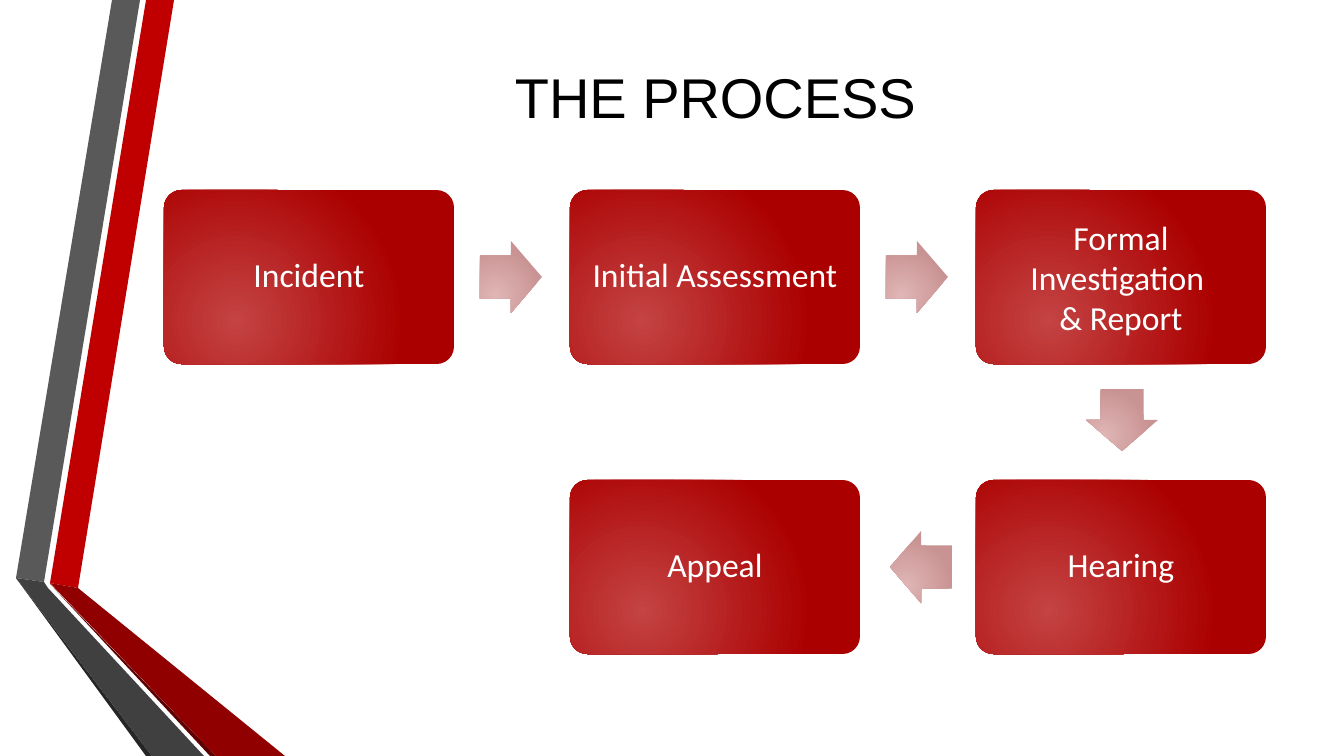
from pptx import Presentation
from pptx.dml.color import RGBColor
from pptx.enum.shapes import MSO_SHAPE as Shape
from pptx.enum.text import MSO_ANCHOR as Anchor, PP_ALIGN as Align
from pptx.oxml import parse_xml
from pptx.oxml.ns import nsdecls, qn
from pptx.util import Pt

EMU_PER_PX = 914400 / 100.8
BLACK = RGBColor(0x00, 0x00, 0x00)
WHITE = RGBColor(0xFF, 0xFF, 0xFF)
RED = RGBColor(0xC0, 0x00, 0x00)
DARK_RED = RGBColor(0x90, 0x00, 0x00)
DEEP_RED = RGBColor(0x60, 0x00, 0x00)
GREY = RGBColor(0x59, 0x59, 0x59)
DARK_GREY = RGBColor(0x40, 0x40, 0x40)
DEEP_GREY = RGBColor(0x26, 0x26, 0x26)
BOX_GRADIENT = (RGBColor(0xC4, 0x43, 0x43), RGBColor(0xAB, 0x00, 0x00))
ARROW_GRADIENT = (RGBColor(0xE0, 0xB5, 0xB5), RGBColor(0xC9, 0x93, 0x93))


def px(length):
    return round(length * EMU_PER_PX)


def add_glowing_shape(kind, left, top, width, height, gradient):
    """Add a borderless shape with a radial gradient, lit from the lower left."""
    shape = slide.shapes.add_shape(kind, px(left), px(top), px(width), px(height))
    shape.shadow.inherit = False
    shape.line.fill.background()
    inner, outer = gradient
    shape._element.spPr.find(qn("a:prstGeom")).addnext(parse_xml(
        f'<a:gradFill {nsdecls("a")} rotWithShape="1"><a:gsLst>'
        f'<a:gs pos="0"><a:srgbClr val="{inner}"/></a:gs>'
        f'<a:gs pos="100000"><a:srgbClr val="{outer}"/></a:gs></a:gsLst>'
        '<a:path path="circle"><a:fillToRect l="50000" t="100000" r="100000" b="50000"/>'
        '</a:path></a:gradFill>'))
    return shape


presentation = Presentation()
presentation.slide_width, presentation.slide_height = px(1344), px(756)
slide = presentation.slides.add_slide(presentation.slide_layouts[5])

# Folded ribbons along the left edge
ribbons = [
    (RED, [(50, 583), (78, 588), (174, 0), (146, 0)]),
    (GREY, [(140, 0), (112, 0), (16, 578), (44, 582)]),
    (DEEP_GREY, [(16, 578), (146, 756), (152, 756)]),
    (DEEP_RED, [(50, 584), (210, 756), (216, 756)]),
    (DARK_RED, [(50, 583), (216, 756), (285, 756), (78, 588)]),
    (DARK_GREY, [(204, 756), (48, 588), (44, 582), (16, 578), (152, 756)]),
]
for color, points in ribbons:
    builder = slide.shapes.build_freeform(*points[0], scale=EMU_PER_PX)
    builder.add_line_segments(points[1:], close=True)
    ribbon = builder.convert_to_shape()
    ribbon.shadow.inherit = False
    ribbon.fill.solid()
    ribbon.fill.fore_color.rgb = color
    ribbon.line.fill.background()

title = slide.shapes.title
title.left, title.top, title.width, title.height = px(163), px(42), px(1105), px(108)
title.text_frame.vertical_anchor = Anchor.MIDDLE
paragraph = title.text_frame.paragraphs[0]
paragraph.alignment = Align.CENTER
run = paragraph.add_run()
run.text = "THE PROCESS"
run.font.name, run.font.size, run.font.color.rgb = "Arial", Pt(40), BLACK

# Process steps on a grid: column, row, lines of text
LEFT, TOP, COLUMN_STEP, ROW_STEP = 164, 190, 406, 290
BOX_WIDTH, BOX_HEIGHT = 290, 174
steps = [
    (0, 0, ["Incident"]),
    (1, 0, ["Initial Assessment"]),
    (2, 0, ["Formal Investigation ", "& Report"]),
    (2, 1, ["Hearing"]),
    (1, 1, ["Appeal"]),
]
for column, row, lines in steps:
    box = add_glowing_shape(Shape.ROUNDED_RECTANGLE, LEFT + column * COLUMN_STEP,
                            TOP + row * ROW_STEP, BOX_WIDTH, BOX_HEIGHT, BOX_GRADIENT)
    box.adjustments[0] = 0.1
    frame = box.text_frame
    frame.word_wrap = True
    frame.vertical_anchor = Anchor.MIDDLE
    frame.margin_left = frame.margin_right = frame.margin_top = frame.margin_bottom = px(10)
    for index, line in enumerate(lines):
        paragraph = frame.add_paragraph() if index else frame.paragraphs[0]
        paragraph.alignment = Align.CENTER
        paragraph.line_spacing = 0.9 if len(lines) == 1 else 1.0
        run = paragraph.add_run()
        run.text = line
        run.font.name, run.font.size, run.font.color.rgb = "Calibri", Pt(24), WHITE

# Arrows between the steps: left, top, rotation
ARROW_WIDTH, ARROW_HEIGHT = 62, 72
for left, top, rotation in [(480, 241, 0), (886, 241, 0), (1091, 384, 90), (890, 531, 180)]:
    arrow = add_glowing_shape(Shape.RIGHT_ARROW, left, top,
                              ARROW_WIDTH, ARROW_HEIGHT, ARROW_GRADIENT)
    arrow.adjustments[0], arrow.adjustments[1] = 0.6, 0.5
    arrow.rotation = rotation

presentation.save("out.pptx")
